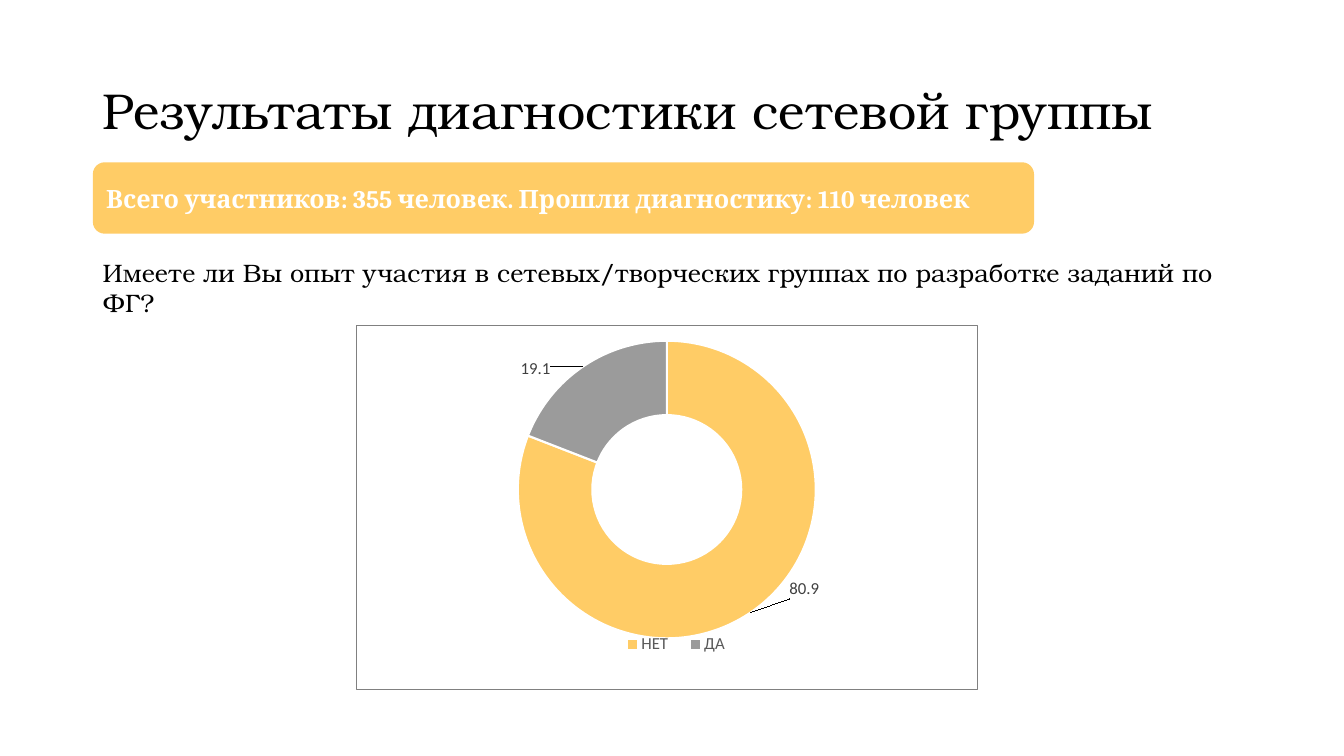
from lxml import etree
from pptx import Presentation
from pptx.chart.data import CategoryChartData
from pptx.dml.color import RGBColor
from pptx.enum.chart import XL_CHART_TYPE, XL_LEGEND_POSITION
from pptx.enum.shapes import MSO_SHAPE
from pptx.enum.text import MSO_ANCHOR, PP_ALIGN
from pptx.oxml import parse_xml
from pptx.oxml.ns import nsdecls, qn
from pptx.util import Cm, Pt

DOUGHNUT = XL_CHART_TYPE.DOUGHNUT
LEGEND_BOTTOM = XL_LEGEND_POSITION.BOTTOM
ROUNDED = MSO_SHAPE.ROUNDED_RECTANGLE
MIDDLE, TOP = MSO_ANCHOR.MIDDLE, MSO_ANCHOR.TOP
LEFT = PP_ALIGN.LEFT

COLORS = {
    "text": "000000",
    "white": "FFFFFF",
    "yellow": "FFCC66",
    "gray": "9B9B9B",
    "border": "808080",
    "label": "404040",
    "legend": "595959",
}
SERIF, BOLD_SERIF, SANS = "TeX Gyre Bonum", "Cambria", "Calibri"
EDGES = {"xMode": "edge", "yMode": "edge"}


def color(name):
    return RGBColor.from_string(COLORS[name])


def manual_layout(**settings):
    """Chart layout element; x, y, w, h are fractions of the chart."""
    layout = etree.Element(qn("c:layout"))
    manual = etree.SubElement(layout, qn("c:manualLayout"))
    for tag, value in settings.items():
        etree.SubElement(manual, qn(f"c:{tag}")).set("val", str(value))
    return layout


def drop_layout(element):
    for layout in element.findall(qn("c:layout")):
        element.remove(layout)


class ResultsSlide:
    def __init__(self, prs):
        self.shapes = prs.slides.add_slide(prs.slide_layouts[6]).shapes

    def style_font(self, font, size, color_name, name, bold=False):
        font.size, font.name, font.bold = Pt(size), name, bold
        font.color.rgb = color(color_name)

    def fill_text(self, shape, text, size, color_name, font, bold=False,
                  anchor=TOP, spacing=1.0):
        frame = shape.text_frame
        frame.word_wrap = True
        frame.vertical_anchor = anchor
        paragraph = frame.paragraphs[0]
        paragraph.alignment = LEFT
        paragraph.line_spacing = spacing
        run = paragraph.add_run()
        run.text = text
        self.style_font(run.font, size, color_name, font, bold)

    def text(self, box, text, size, **options):
        shape = self.shapes.add_textbox(*map(Cm, box))
        self.fill_text(shape, text, size, "text", SERIF, **options)

    def banner(self, box, text):
        shape = self.shapes.add_shape(ROUNDED, *map(Cm, box))
        shape.shadow.inherit = False
        shape.fill.solid()
        shape.fill.fore_color.rgb = color("yellow")
        shape.line.fill.background()
        self.fill_text(shape, text, 18, "white", BOLD_SERIF, bold=True, anchor=MIDDLE)

    def doughnut(self, box, answers):
        """answers: (category, value, color, label offset) for each slice."""
        categories, values, fills, offsets = zip(*answers)
        data = CategoryChartData()
        data.categories = categories
        data.add_series("Series 1", values)
        chart = self.shapes.add_chart(DOUGHNUT, *map(Cm, box), data).chart
        chart.has_title = False
        self.style_font(chart.font, 10, "text", SANS)
        plot = chart.plots[0]
        plot.vary_by_categories = True
        series = plot.series[0]

        # Slices and their labels
        labels = series.data_labels
        labels.show_value = True
        self.style_font(labels.font, 12, "label", SANS)
        for index, fill in enumerate(fills):
            point = series.points[index]
            point.format.fill.solid()
            point.format.fill.fore_color.rgb = color(fill)
            point.format.line.color.rgb = color("white")
            point.format.line.width = Pt(1.5)
            self.style_font(point.data_label.font, 12, "label", SANS)
        label_ids = series._element.findall(".//" + qn("c:dLbl") + "/" + qn("c:idx"))
        for label_id, (dx, dy) in zip(label_ids, offsets):
            label_id.addnext(manual_layout(x=dx, y=dy))

        # Legend
        chart.has_legend = True
        legend = chart.legend
        legend.position = LEGEND_BOTTOM
        legend.include_in_layout = False
        self.style_font(legend.font, 12, "legend", SANS)
        drop_layout(legend._element)
        legend._element.find(qn("c:legendPos")).addnext(
            manual_layout(**EDGES, x=0.41, y=0.84, w=0.21, h=0.07))

        # Ring placement, hole and frame
        space = chart._chartSpace
        area = space.find(".//" + qn("c:plotArea"))
        drop_layout(area)
        area.insert(0, manual_layout(layoutTarget="inner", **EDGES,
                                     x=0.26, y=0.04, w=0.48, h=0.82))
        area.find(".//" + qn("c:holeSize")).set("val", "75")
        space.find(qn("c:chart")).addnext(parse_xml(
            f'<c:spPr {nsdecls("c", "a")}><a:noFill/><a:ln w="{Pt(0.75)}"><a:solidFill>'
            f'<a:srgbClr val="{COLORS["border"]}"/></a:solidFill></a:ln></c:spPr>'))


def main():
    prs = Presentation()
    prs.slide_width, prs.slide_height = Cm(33.87), Cm(19.05)
    slide = ResultsSlide(prs)
    left = 2.34

    # Heading
    slide.text((left, 1.02, 29.21, 3.68), "Результаты диагностики сетевой группы",
               36, anchor=MIDDLE, spacing=0.9)
    slide.banner((left, 4.09, 23.72, 1.8),
                 "Всего участников: 355 человек. Прошли диагностику: 110 человек")

    # Question and answers
    slide.text((left, 6.35, 29.87, 1.02),
               "Имеете ли Вы опыт участия в сетевых/творческих группах "
               "по разработке заданий по ФГ?", 18)
    slide.doughnut((8.97, 8.2, 15.67, 9.19), [
        ("НЕТ", 80.9, "yellow", (0.12, 0.02)),
        ("ДА", 19.1, "gray", (-0.11, -0.08)),
    ])
    prs.save("out.pptx")


if __name__ == "__main__":
    main()
